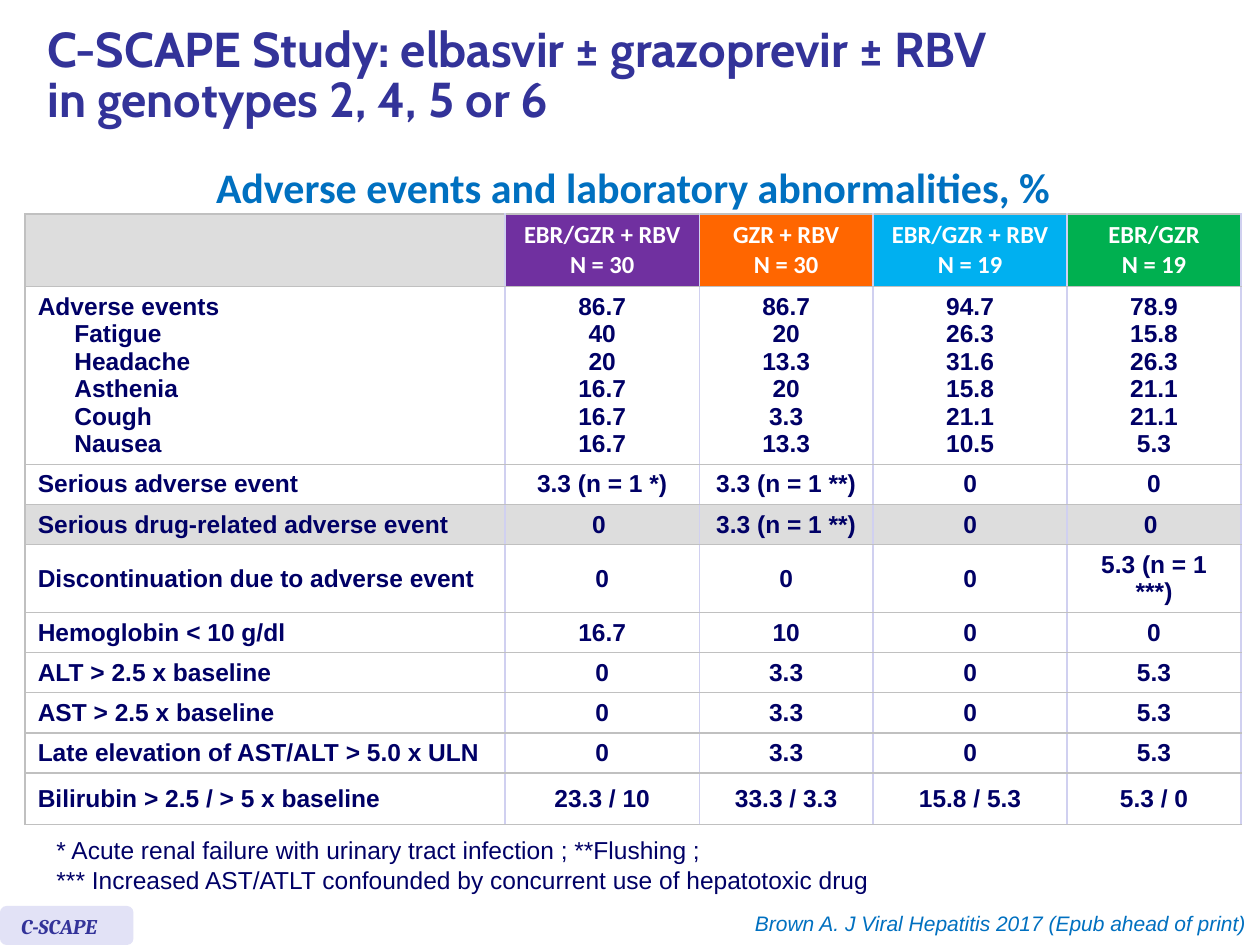
"""Build the C-SCAPE adverse events slide."""
from lxml.etree import SubElement
from pptx import Presentation
from pptx.dml.color import RGBColor
from pptx.enum.shapes import MSO_SHAPE
from pptx.enum.text import MSO_ANCHOR, MSO_AUTO_SIZE, PP_ALIGN
from pptx.oxml.ns import qn
from pptx.util import Inches, Pt

HUES = {
    "navy": "000066", "indigo": "333399", "blue": "0070C0", "white": "FFFFFF",
    "gray": "DDDDDD", "rule": "C0C0C0", "lilac": "D0D0F0", "badge": "E2E2F6",
    "purple": "7030A0", "orange": "FF6600", "sky": "00B0F0", "green": "00B050",
}
ARMS = [
    ("EBR/GZR + RBV", 30, "purple"), ("GZR + RBV", 30, "orange"),
    ("EBR/GZR + RBV", 19, "sky"), ("EBR/GZR", 19, "green"),
]
EVENTS = [
    ("Adverse events", "86.7", "86.7", "94.7", "78.9"),
    ("Fatigue", "40", "20", "26.3", "15.8"),
    ("Headache", "20", "13.3", "31.6", "26.3"),
    ("Asthenia", "16.7", "20", "15.8", "21.1"),
    ("Cough", "16.7", "3.3", "21.1", "21.1"),
    ("Nausea", "16.7", "13.3", "10.5", "5.3"),
]
ROWS = [
    ("Serious adverse event", "3.3 (n = 1 *)", "3.3 (n = 1 **)", "0", "0"),
    ("Serious drug-related adverse event", "0 ", "3.3 (n = 1 **)", "0", "0 "),
    ("Discontinuation due to adverse event", "0", "0", "0", "5.3 (n = 1 ***)"),
    ("Hemoglobin < 10 g/dl", "16.7", "10", "0", "0"),
    ("ALT > 2.5 x baseline", "0", "3.3", "0", "5.3"),
    ("AST > 2.5 x baseline", "0", "3.3", "0", "5.3"),
    ("Late elevation of AST/ALT > 5.0 x ULN", "0", "3.3", "0", "5.3"),
    ("Bilirubin > 2.5 / > 5 x baseline", "23.3 / 10", "33.3 / 3.3", "15.8 / 5.3", "5.3 / 0"),
]
SHADED = 3
WIDTHS = [3.81, 1.54, 1.38, 1.54, 1.38]
HEIGHTS = [0.51, 1.33, 0.3, 0.3, 0.37, 0.3, 0.3, 0.3, 0.3, 0.41]


class Deck:
    """Hold the style and the current slide."""

    def __init__(self, slide, hues):
        self.slide = slide
        self.hues = hues

    def color(self, name):
        return RGBColor.from_string(self.hues[name])

    def lines(self, frame, lines, size, face, hue, bold=False, italic=False,
              align=PP_ALIGN.LEFT, space=None):
        for i, line in enumerate(lines):
            para = frame.add_paragraph() if i else frame.paragraphs[0]
            para.alignment = align
            if space:
                para.line_spacing = space
            for j, part in enumerate(line.split("\n")):
                if j:
                    para.add_line_break()
                run = para.add_run()
                run.text = part
                font = run.font
                font.size, font.name = Pt(size), face
                font.bold, font.italic = bold, italic
                font.color.rgb = self.color(hue)

    def text(self, box, lines, size, face, hue, wrap=True, grow=True, **style):
        frame = self.slide.shapes.add_textbox(*map(Inches, box)).text_frame
        frame.word_wrap = wrap
        if grow:
            frame.auto_size = MSO_AUTO_SIZE.SHAPE_TO_FIT_TEXT
        else:
            frame.vertical_anchor = MSO_ANCHOR.MIDDLE
        self.lines(frame, lines, size, face, hue, **style)

    def badge(self, box, hue):
        shape = self.slide.shapes.add_shape(MSO_SHAPE.ROUNDED_RECTANGLE, *map(Inches, box))
        shape.shadow.inherit = False
        shape.fill.solid()
        shape.fill.fore_color.rgb = self.color(hue)
        shape.line.fill.background()

    def border(self, cell, sides):
        props = cell._tc.get_or_add_tcPr()
        for side, hue in sides.items():
            line = SubElement(props, qn(f"a:ln{side}"), w=str(Pt(1)))
            fill = SubElement(line, qn("a:solidFill"))
            SubElement(fill, qn("a:srgbClr"), val=self.hues[hue])

    def cell(self, cell, lines, fill, first, face="Arial", hue="navy"):
        self.border(cell, {"L": "rule" if first else "lilac", "R": "lilac",
                           "T": "rule", "B": "rule"})
        cell.fill.solid()
        cell.fill.fore_color.rgb = self.color(fill)
        cell.vertical_anchor = MSO_ANCHOR.MIDDLE
        align = PP_ALIGN.LEFT if first else PP_ALIGN.CENTER
        self.lines(cell.text_frame, lines, 14, face, hue, bold=True, align=align)

    def table(self, box, arms, events, rows):
        size = len(HEIGHTS), len(WIDTHS)
        grid = self.slide.shapes.add_table(*size, *map(Inches, box)).table
        grid.first_row = grid.horz_banding = False
        for col, width in zip(grid.columns, WIDTHS):
            col.width = Inches(width)
        for row, height in zip(grid.rows, HEIGHTS):
            row.height = Inches(height)
        self.cell(grid.cell(0, 0), [], "gray", True)
        for c, (name, count, hue) in enumerate(arms, 1):
            self.cell(grid.cell(0, c), [name, f"N = {count}"], hue, False, "Calibri", "white")
        body = [list(zip(*events))] + [[[item] for item in row] for row in rows]
        for r, row in enumerate(body, 1):
            for c, lines in enumerate(row):
                fill = "gray" if r == SHADED else "white"
                self.cell(grid.cell(r, c), lines, fill, c == 0)
        for para in grid.cell(1, 0).text_frame.paragraphs[1:]:
            props = para._p.get_or_add_pPr()
            props.set("marL", str(Inches(0.29)))
            props.set("indent", "0")


def main():
    prs = Presentation()
    prs.slide_width, prs.slide_height = Inches(10), Inches(7.5)
    deck = Deck(prs.slides.add_slide(prs.slide_layouts[6]), HUES)
    deck.table((0.2, 1.7, 9.65, 4.87), ARMS, EVENTS, ROWS)
    deck.badge((0, 7.19, 1.06, 0.31), "badge")
    deck.text((0.07, 7.2, 1.15, 0.3), ["C-SCAPE"], 12, "Cambria", "indigo",
              bold=True, italic=True)
    deck.text((0.35, 6.58, 6.7, 0.57), [
        "* Acute renal failure with urinary tract infection ; **Flushing ;",
        "*** Increased AST/ATLT confounded by concurrent use of hepatotoxic drug",
    ], 14, "Arial", "navy", wrap=False)
    deck.text((0.08, 1.23, 9.89, 0.5), ["Adverse events and laboratory abnormalities, %"],
              24, "Calibri", "blue", bold=True, align=PP_ALIGN.CENTER)
    deck.text((0.28, 0.08, 9.49, 1.07),
              ["C-SCAPE Study: elbasvir ± grazoprevir ± RBV\nin genotypes 2, 4, 5 or 6"],
              28, "Cabin", "indigo", grow=False, bold=True, space=0.85)
    deck.text((5.48, 7.18, 4.51, 0.3), ["Brown A. J Viral Hepatitis 2017 (Epub ahead of print)"],
              12, "Arial", "blue", italic=True, align=PP_ALIGN.RIGHT)
    prs.save("out.pptx")


if __name__ == "__main__":
    main()
